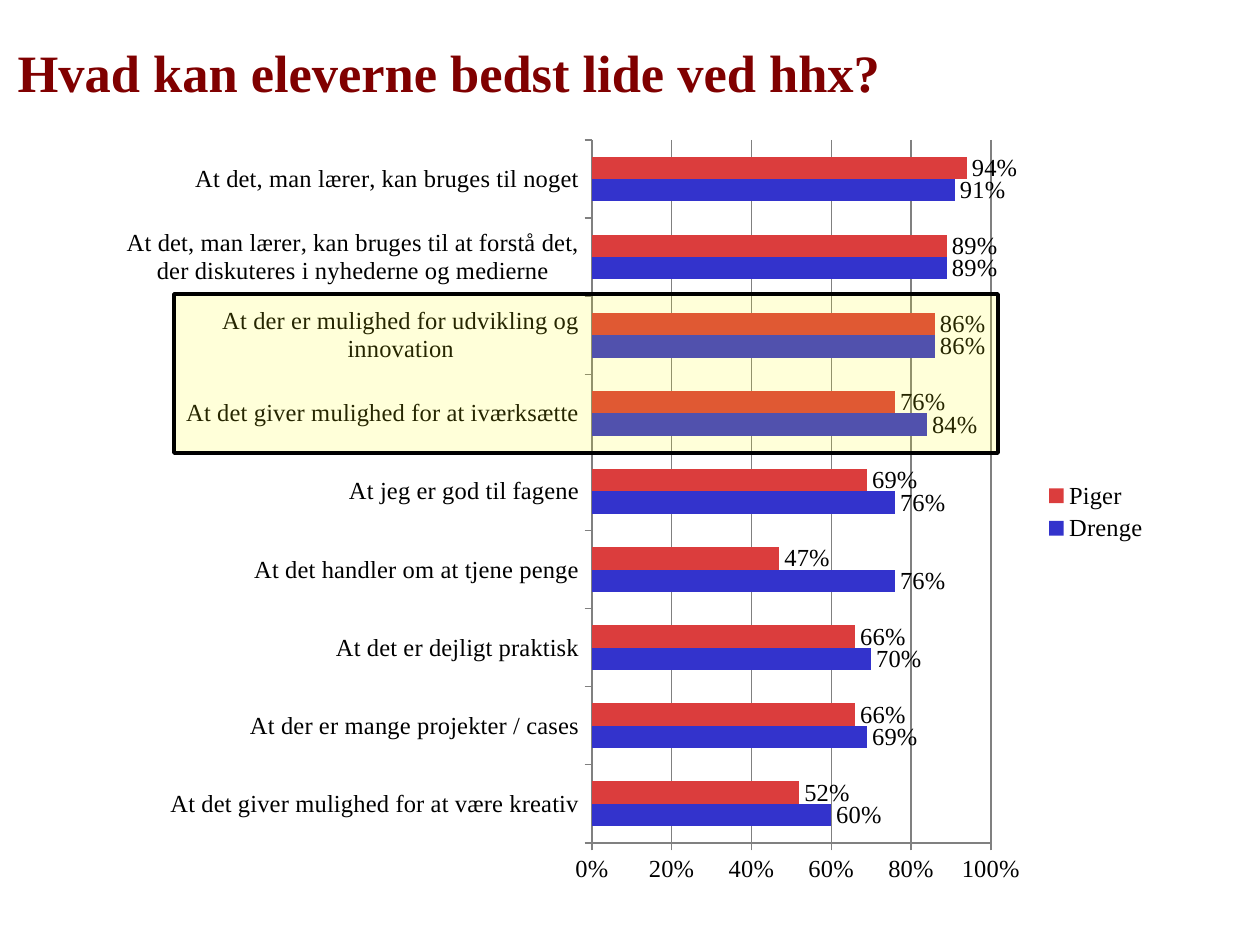
from lxml import etree
from pptx import Presentation
from pptx.chart.data import CategoryChartData
from pptx.dml.color import RGBColor
from pptx.enum.chart import XL_CHART_TYPE, XL_LABEL_POSITION, XL_LEGEND_POSITION, XL_TICK_MARK
from pptx.enum.shapes import MSO_SHAPE
from pptx.enum.text import MSO_ANCHOR, PP_ALIGN
from pptx.oxml.ns import qn
from pptx.util import Emu, Pt

BARS = XL_CHART_TYPE.BAR_CLUSTERED
OUTER = XL_LABEL_POSITION.OUTSIDE_END
RIGHT = XL_LEGEND_POSITION.RIGHT
TICK = XL_TICK_MARK.OUTSIDE
RECT = MSO_SHAPE.RECTANGLE
MIDDLE = MSO_ANCHOR.MIDDLE
LEFT = PP_ALIGN.LEFT

MAROON = RGBColor(0x80, 0x00, 0x00)
BLACK = RGBColor(0x00, 0x00, 0x00)
GREY = RGBColor(0x80, 0x80, 0x80)
BLUE = RGBColor(0x33, 0x33, 0xCC)
RED = RGBColor(0xDB, 0x3D, 0x3D)
YELLOW = RGBColor(0xFF, 0xFF, 0x00)
FONT = "Times New Roman"

REASONS = [
    ("At det giver mulighed for at være kreativ", 0.60, 0.52),
    ("At der er mange projekter / cases", 0.69, 0.66),
    ("At det er dejligt praktisk", 0.70, 0.66),
    ("At det handler om at tjene penge", 0.76, 0.47),
    ("At jeg er god til fagene", 0.76, 0.69),
    ("At det giver mulighed for at iværksætte", 0.84, 0.76),
    ("At der er mulighed for udvikling og innovation", 0.86, 0.86),
    ("At det, man lærer, kan bruges til at forstå det, "
     "der diskuteres i nyhederne og medierne", 0.89, 0.89),
    ("At det, man lærer, kan bruges til noget", 0.91, 0.94),
]


def px(*sizes):
    """Turn pixel lengths into EMU at 126 px to the inch."""
    return [Emu(round(size * 914400 / 126)) for size in sizes]


def set_font(font, size, color, bold=False):
    """Apply the slide's typeface with a size, colour and weight."""
    font.name, font.size, font.bold = FONT, Pt(size), bold
    font.color.rgb = color


def add_title(slide, box, text):
    """Fill the title placeholder and move it to the box."""
    title = slide.shapes.title
    title.left, title.top, title.width, title.height = px(*box)
    frame = title.text_frame
    frame.word_wrap = True
    frame.vertical_anchor = MIDDLE
    para = frame.paragraphs[0]
    para.alignment = LEFT
    run = para.add_run()
    run.text = text
    set_font(run.font, 30, MAROON, True)


def set_plot(chart, box, plot):
    """Fix the inner plot area, given in px within the chart box."""
    area = chart.plots[0]._element.getparent()
    for old in area.findall(qn("c:layout")):
        area.remove(old)
    layout = etree.Element(qn("c:layout"))
    area.insert(0, layout)
    manual = etree.SubElement(layout, qn("c:manualLayout"))
    parts = [("layoutTarget", "inner"), ("xMode", "edge"), ("yMode", "edge")]
    sizes = zip("xywh", plot, box[2:] * 2)
    parts += [(key, f"{part / whole:.4f}") for key, part, whole in sizes]
    for key, value in parts:
        etree.SubElement(manual, qn(f"c:{key}")).set("val", value)


def add_bars(slide, box):
    """Draw the clustered bar chart of reasons in the box."""
    names, boys, girls = zip(*REASONS)
    data = CategoryChartData(number_format="0%")
    data.categories = names
    data.add_series("Drenge", boys)
    data.add_series("Piger", girls)
    chart = slide.shapes.add_chart(BARS, *px(*box), data).chart
    set_font(chart.font, 14, BLACK)
    chart.has_title = False
    chart.has_legend = True
    chart.legend.position = RIGHT
    chart.legend.include_in_layout = False

    plot = chart.plots[0]
    plot.gap_width, plot.overlap = 150, 0
    plot.vary_by_categories = False
    for series, color in zip(plot.series, (BLUE, RED)):
        series.format.fill.solid()
        series.format.fill.fore_color.rgb = color
        labels = series.data_labels
        labels.show_value = True
        labels.number_format = "0%"
        labels.number_format_is_linked = False
        labels.position = OUTER
        set_font(labels.font, 14, BLACK)

    scale = chart.value_axis
    scale.minimum_scale, scale.maximum_scale, scale.major_unit = 0, 1, 0.2
    scale.has_major_gridlines = True
    scale.tick_labels.number_format = "0%"
    scale.tick_labels.number_format_is_linked = False
    for axis in (scale, chart.category_axis):
        axis.major_tick_mark = TICK
        set_font(axis.tick_labels.font, 14, BLACK)
    for part in (scale, chart.category_axis, scale.major_gridlines):
        part.format.line.color.rgb = GREY
        part.format.line.width = Pt(0.75)
    set_plot(chart, box, (469, 15, 399, 703))


def add_mark(slide, box):
    """Frame two reasons with a sheer yellow box inside the chart box."""
    left, top = box[:2]
    mark = slide.shapes.add_shape(RECT, *px(left + 51, top + 169, 824, 159))
    mark.shadow.inherit = False
    mark.fill.solid()
    mark.fill.fore_color.rgb = YELLOW
    color = mark._element.spPr.find(qn("a:solidFill"))[0]
    etree.SubElement(color, qn("a:alpha")).set("val", "15000")
    mark.line.color.rgb = BLACK
    mark.line.width = Pt(2)


def main():
    """Build the slide and save it."""
    deck = Presentation()
    deck.slide_width, deck.slide_height = px(1260, 945)
    slide = deck.slides.add_slide(deck.slide_layouts[5])
    chart_box = (123, 125, 1038, 774)
    add_bars(slide, chart_box)
    add_mark(slide, chart_box)
    add_title(slide, (5, 33, 903, 77), "Hvad kan eleverne bedst lide ved hhx?")
    deck.save("out.pptx")


if __name__ == "__main__":
    main()
